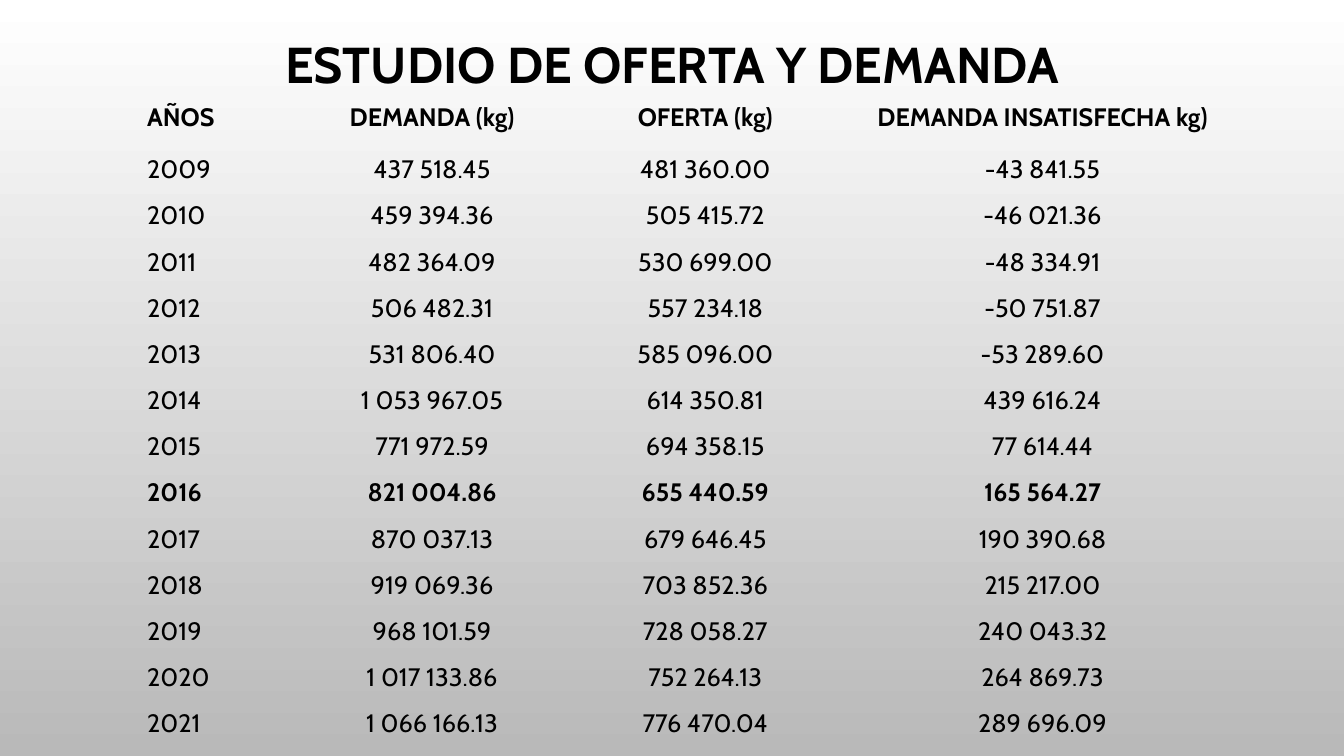
from pptx import Presentation
from pptx.dml.color import RGBColor
from pptx.enum.text import MSO_ANCHOR as Anchor, PP_ALIGN as Align
from pptx.oxml.ns import qn
from pptx.util import Inches, Pt

FONT = "Cabin"
COLORS = {"text": "000000", "top": "FFFFFF", "bottom": "B9B9B9"}
NO_GRID_STYLE = "{2D5ABB26-0587-4C30-8999-92F81FD0307C}"
COLUMN_WIDTHS = [1.45, 2.89, 2.53, 4.16]
HEADER_HEIGHT, ROW_HEIGHT = 0.58, 0.42
CELL_MARGIN = 0.07
BOLD_YEAR = "2016"
HEADERS = ["AÑOS", "DEMANDA (kg)", "OFERTA (kg)", "DEMANDA INSATISFECHA kg)"]
BALANCE = [
    ("2009", "437 518.45", "481 360.00", "-43 841.55"),
    ("2010", "459 394.36", "505 415.72", "-46 021.36"),
    ("2011", "482 364.09", "530 699.00", "-48 334.91"),
    ("2012", "506 482.31", "557 234.18", "-50 751.87"),
    ("2013", "531 806.40", "585 096.00", "-53 289.60"),
    ("2014", "1 053 967.05", "614 350.81", "439 616.24"),
    ("2015", "771 972.59", "694 358.15", "77 614.44"),
    ("2016", "821 004.86", "655 440.59", "165 564.27"),
    ("2017", "870 037.13", "679 646.45", "190 390.68"),
    ("2018", "919 069.36", "703 852.36", "215 217.00"),
    ("2019", "968 101.59", "728 058.27", "240 043.32"),
    ("2020", "1 017 133.86", "752 264.13", "264 869.73"),
    ("2021", "1 066 166.13", "776 470.04", "289 696.09"),
]


def paint_background(slide):
    fill = slide.background.fill
    fill.gradient()
    fill.gradient_angle = 270
    for stop, name in zip(fill.gradient_stops, ("top", "bottom")):
        stop.color.rgb = RGBColor.from_string(COLORS[name])


def write_text(frame, text, size, bold, align, spacing):
    frame.text = text
    para = frame.paragraphs[0]
    para.alignment = align
    para.line_spacing = spacing
    font = para.runs[0].font
    font.name = FONT
    font.size = Pt(size)
    font.bold = bold
    font.color.rgb = RGBColor.from_string(COLORS["text"])


def place_title(slide, text):
    title = slide.shapes.title
    title.left, title.top = Inches(1), Inches(-0.21)
    title.width, title.height = Inches(11.33), Inches(1.75)
    title.text_frame.vertical_anchor = Anchor.MIDDLE
    write_text(title.text_frame, text, 36, True, Align.CENTER, 0.9)


def fill_cell(cell, text, bold, align, anchor):
    cell.fill.background()
    cell.margin_left = cell.margin_right = Inches(CELL_MARGIN)
    cell.margin_top = cell.margin_bottom = 0
    cell.vertical_anchor = anchor
    write_text(cell.text_frame, text, 18, bold, align, 1.5)


def add_balance_table(slide):
    rows = [HEADERS, *BALANCE]
    height = HEADER_HEIGHT + ROW_HEIGHT * len(BALANCE)
    table = slide.shapes.add_table(
        len(rows), len(HEADERS), Inches(1.39), Inches(0.8),
        Inches(sum(COLUMN_WIDTHS)), Inches(height)).table
    table._tbl.tblPr.find(qn("a:tableStyleId")).text = NO_GRID_STYLE
    table.first_row = table.horz_banding = False
    for column, width in zip(table.columns, COLUMN_WIDTHS):
        column.width = Inches(width)
    for row_index, values in enumerate(rows):
        is_header = row_index == 0
        table.rows[row_index].height = Inches(HEADER_HEIGHT if is_header else ROW_HEIGHT)
        bold = is_header or values[0] == BOLD_YEAR
        anchor = Anchor.MIDDLE if is_header else Anchor.TOP
        for column_index, value in enumerate(values):
            align = Align.CENTER if column_index else Align.LEFT
            fill_cell(table.cell(row_index, column_index), value, bold, align, anchor)


def main():
    deck = Presentation()
    deck.slide_width, deck.slide_height = Inches(13.33), Inches(7.5)
    slide = deck.slides.add_slide(deck.slide_layouts[5])
    paint_background(slide)
    place_title(slide, "ESTUDIO DE OFERTA Y DEMANDA")
    add_balance_table(slide)
    deck.save("out.pptx")


if __name__ == "__main__":
    main()
